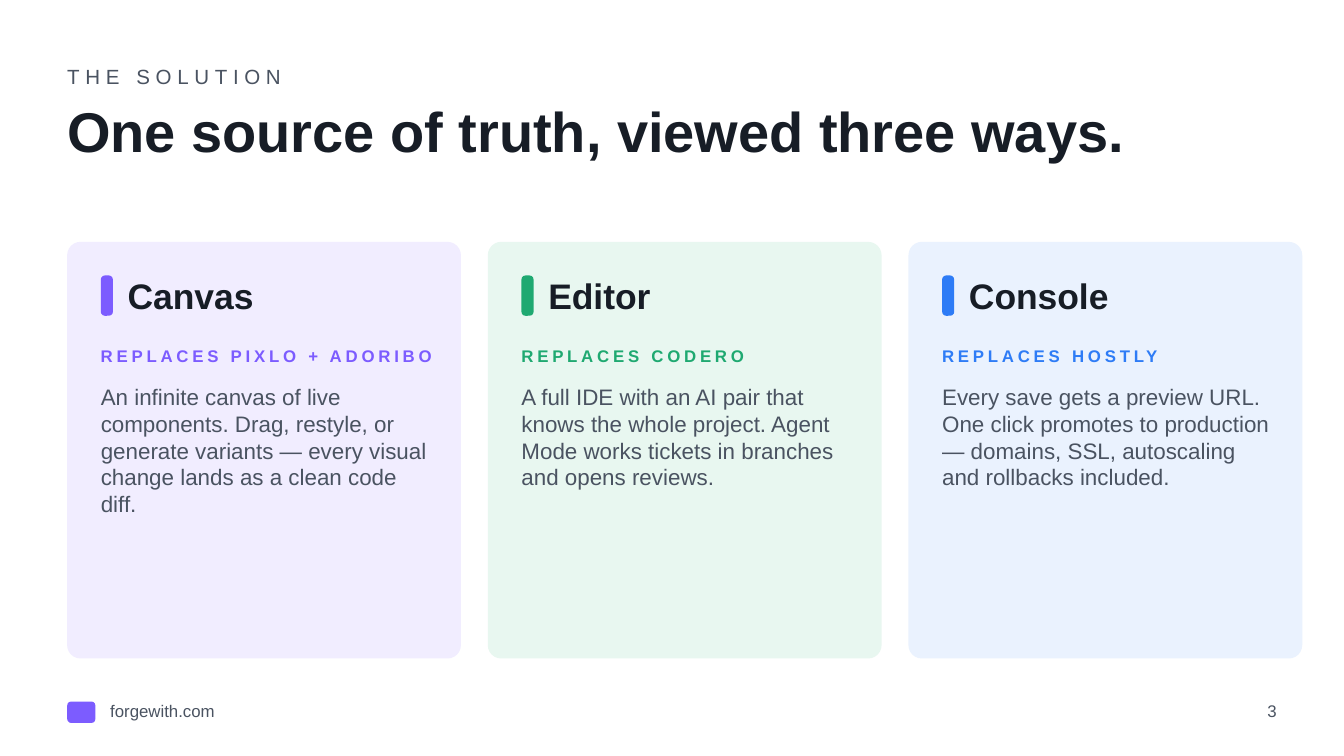
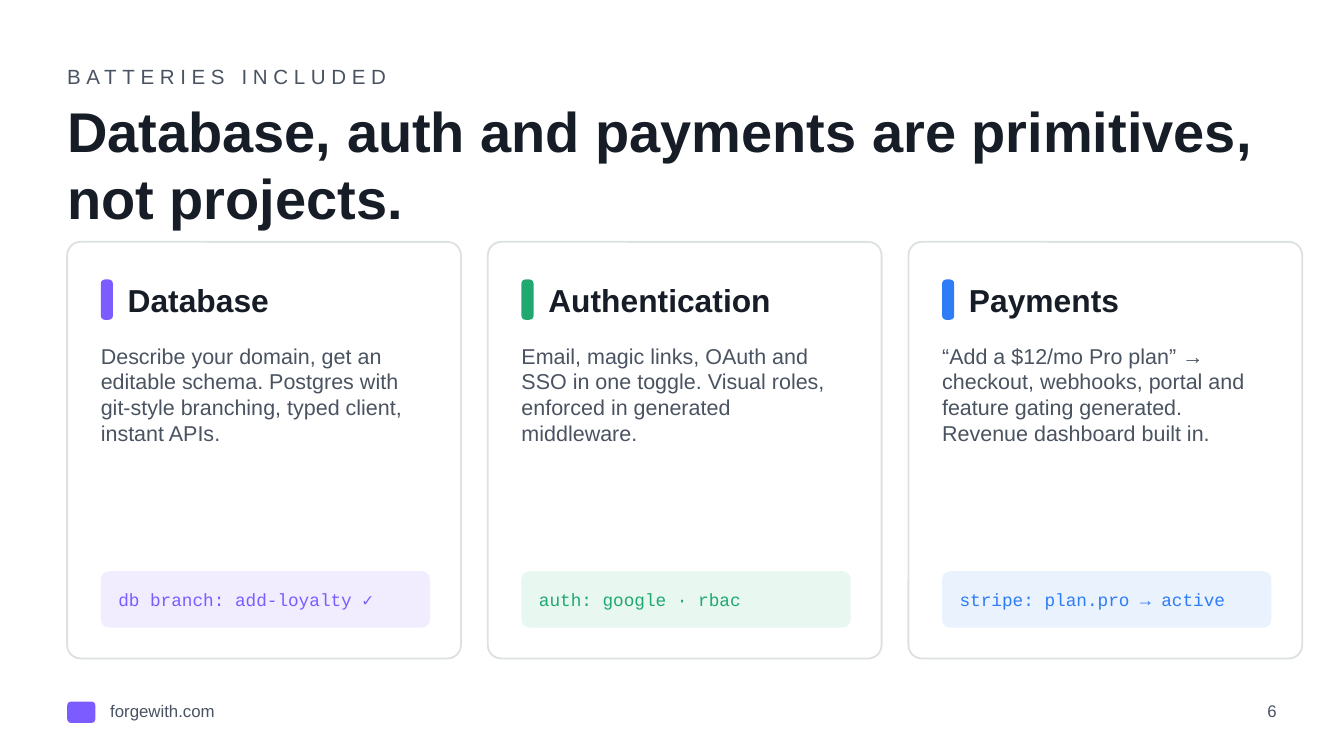
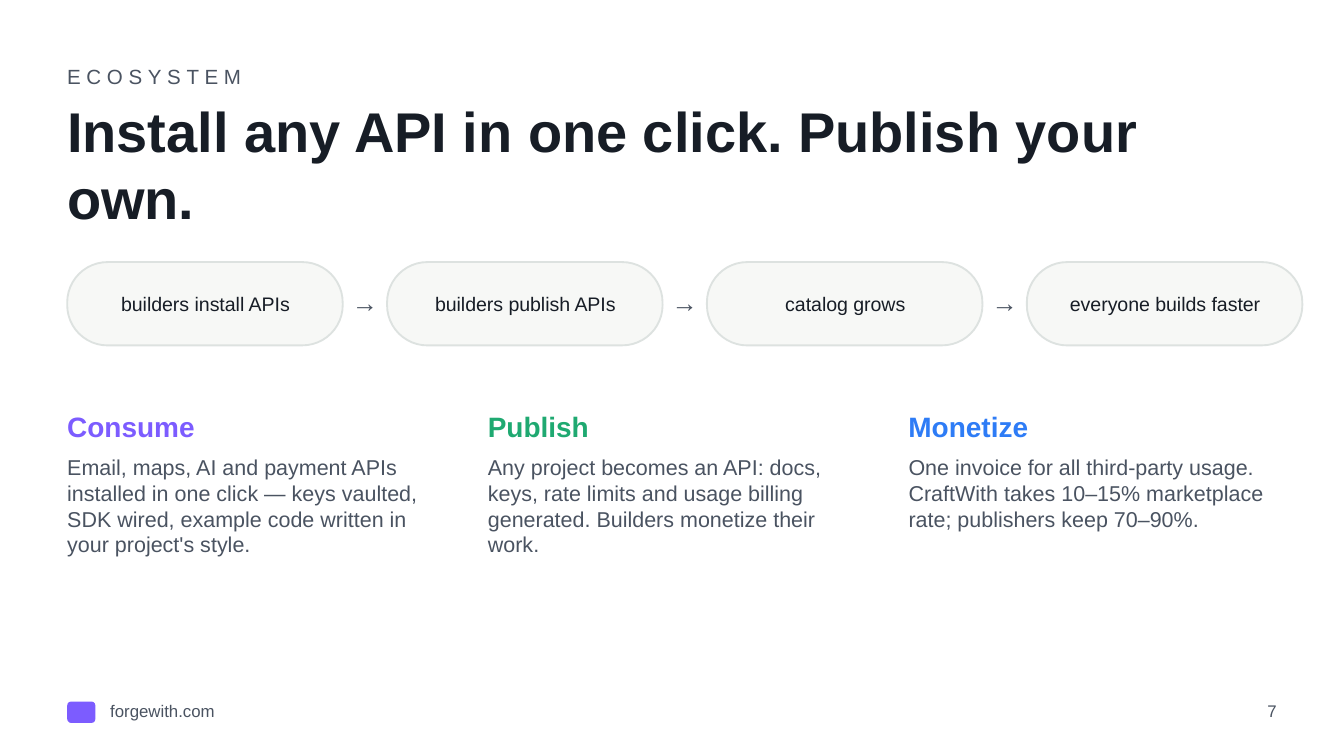
from dataclasses import dataclass, replace

from pptx import Presentation
from pptx.dml.color import RGBColor
from pptx.enum.shapes import MSO_SHAPE
from pptx.enum.text import MSO_ANCHOR, PP_ALIGN
from pptx.util import Inches, Pt

ROUNDED = MSO_SHAPE.ROUNDED_RECTANGLE
TOP, MIDDLE = MSO_ANCHOR.TOP, MSO_ANCHOR.MIDDLE
LEFT, CENTER, RIGHT = PP_ALIGN.LEFT, PP_ALIGN.CENTER, PP_ALIGN.RIGHT


@dataclass(frozen=True)
class TextStyle:
    """How a piece of text looks."""
    size: float
    color: str = "4A5361"
    bold: bool = False
    font: str = "Arial"
    tracking: float = 0


@dataclass(frozen=True)
class Accent:
    """A strong colour and the pale tint that goes with it."""
    strong: str
    tint: str


@dataclass(frozen=True)
class Grid:
    """Equal columns, separated by equal gaps, in inches."""
    left: float
    width: float
    gap: float

    def column(self, index):
        """Return the left edge of a column."""
        return self.left + index * (self.width + self.gap)


@dataclass(frozen=True)
class Theme:
    """Colours and type styles shared by the slides."""
    ink: str = "171D26"
    paper: str = "FFFFFF"
    mist: str = "F7F8F6"
    border: str = "DDE2E0"
    accents: tuple = (
        Accent("7C5CFF", "F1EDFF"),
        Accent("1FA971", "E8F7F0"),
        Accent("2E7CF6", "EAF2FE"),
    )
    kicker: TextStyle = TextStyle(11, tracking=3)
    title: TextStyle = TextStyle(30, ink, bold=True)
    product: TextStyle = TextStyle(19, ink, bold=True)
    primitive: TextStyle = TextStyle(17, ink, bold=True)
    heading: TextStyle = TextStyle(15, bold=True)
    label: TextStyle = TextStyle(9, bold=True, tracking=2)
    lead: TextStyle = TextStyle(12)
    body: TextStyle = TextStyle(11.5)
    code: TextStyle = TextStyle(9.5, font="Courier New")
    step: TextStyle = TextStyle(10.5, ink)
    arrow: TextStyle = TextStyle(14)
    footer: TextStyle = TextStyle(9)


THEME = Theme()
SLIDE_WIDTH = 10
SLIDE_HEIGHT = SLIDE_WIDTH * 9 / 16
MARGIN = SLIDE_WIDTH * 0.05
CONTENT_WIDTH = SLIDE_WIDTH - 2 * MARGIN
THIRDS = Grid(MARGIN, 2.93, 0.2)
QUARTERS = Grid(MARGIN, 2.05, 0.33)
CARD_TOP, CARD_HEIGHT, CARD_PADDING = 1.8, 3.1, 0.25
INNER_WIDTH = 2.45
FLOW_TOP, FLOW_HEIGHT = 1.95, 0.62
FOOTER_TOP = 5.14

PRODUCTS = (
    ("Canvas", "REPLACES PIXLO + ADORIBO",
     "An infinite canvas of live components. Drag, restyle, or generate "
     "variants — every visual change lands as a clean code diff."),
    ("Editor", "REPLACES CODERO",
     "A full IDE with an AI pair that knows the whole project. Agent Mode "
     "works tickets in branches and opens reviews."),
    ("Console", "REPLACES HOSTLY",
     "Every save gets a preview URL. One click promotes to production — "
     "domains, SSL, autoscaling and rollbacks included."),
)
PRIMITIVES = (
    ("Database", "db branch: add-loyalty ✓",
     "Describe your domain, get an editable schema. Postgres with git-style "
     "branching, typed client, instant APIs."),
    ("Authentication", "auth: google · rbac",
     "Email, magic links, OAuth and SSO in one toggle. Visual roles, "
     "enforced in generated middleware."),
    ("Payments", "stripe: plan.pro → active",
     "“Add a $12/mo Pro plan” → checkout, webhooks, portal and feature "
     "gating generated. Revenue dashboard built in."),
)
FLYWHEEL = ("builders install APIs", "builders publish APIs",
            "catalog grows", "everyone builds faster")
BENEFITS = (
    ("Consume",
     "Email, maps, AI and payment APIs installed in one click — keys "
     "vaulted, SDK wired, example code written in your project's style."),
    ("Publish",
     "Any project becomes an API: docs, keys, rate limits and usage billing "
     "generated. Builders monetize their work."),
    ("Monetize",
     "One invoice for all third-party usage. CraftWith takes 10–15% "
     "marketplace rate; publishers keep 70–90%."),
)


def add_text(slide, box, text, style, anchor=MIDDLE, align=LEFT):
    """Add a wrapped text box without insets."""
    frame = slide.shapes.add_textbox(*map(Inches, box)).text_frame
    frame.word_wrap = True
    frame.vertical_anchor = anchor
    frame.margin_left = frame.margin_right = 0
    frame.margin_top = frame.margin_bottom = 0
    paragraph = frame.paragraphs[0]
    paragraph.alignment = align
    run = paragraph.add_run()
    run.text = text
    if style.tracking:
        run._r.get_or_add_rPr().set("spc", str(int(style.tracking * 100)))
    paragraph.font.name = style.font
    paragraph.font.size = Pt(style.size)
    paragraph.font.bold = style.bold
    paragraph.font.color.rgb = RGBColor.from_string(style.color)


def add_panel(slide, box, radius, fill, border=None):
    """Add a rounded panel whose corner radius is given in inches."""
    panel = slide.shapes.add_shape(ROUNDED, *map(Inches, box))
    panel.shadow.inherit = False
    panel.adjustments[0] = radius / min(box[2:])
    panel.fill.solid()
    panel.fill.fore_color.rgb = RGBColor.from_string(fill)
    if border:
        panel.line.color.rgb = RGBColor.from_string(border)
        panel.line.width = Pt(1)
    else:
        panel.line.fill.background()


def add_page(deck, kicker, title, number):
    """Add a blank slide with the shared header and footer."""
    slide = deck.slides.add_slide(deck.slide_layouts[6])
    add_text(slide, (MARGIN, 0.42, CONTENT_WIDTH, 0.3), kicker, THEME.kicker)
    add_text(slide, (MARGIN, 0.72, CONTENT_WIDTH, 0.75), title, THEME.title, TOP)
    add_panel(slide, (MARGIN, FOOTER_TOP + 0.08, 0.21, 0.16), 0.03,
              THEME.accents[0].strong)
    add_text(slide, (0.82, FOOTER_TOP, 2, 0.3), "forgewith.com", THEME.footer)
    add_text(slide, (SLIDE_WIDTH - MARGIN - 0.3, FOOTER_TOP, 0.3, 0.3),
             str(number), THEME.footer, align=RIGHT)
    return slide


def add_card(slide, column, heading, style, heading_top, fill, border=None):
    """Add a card with an accent bar and heading, and return its inner left."""
    left = THIRDS.column(column)
    inner = left + CARD_PADDING
    add_panel(slide, (left, CARD_TOP, THIRDS.width, CARD_HEIGHT), 0.1, fill, border)
    add_panel(slide, (inner, heading_top + 0.05, 0.09, 0.3), 0.03,
              THEME.accents[column].strong)
    add_text(slide, (inner + 0.2, heading_top, 2.3, 0.4), heading, style)
    return inner


def add_product(slide, column, name, replaces, description):
    """Add a tinted card for one product view."""
    accent = THEME.accents[column]
    inner = add_card(slide, column, name, THEME.product, 2, accent.tint)
    add_text(slide, (inner, 2.5, 2.5, 0.3), replaces,
             replace(THEME.label, color=accent.strong))
    add_text(slide, (inner, 2.85, INNER_WIDTH, 1.9), description, THEME.lead, TOP)


def add_primitive(slide, column, name, code, description):
    """Add an outlined card that ends in a strip of code."""
    accent = THEME.accents[column]
    inner = add_card(slide, column, name, THEME.primitive, 2.03,
                     THEME.paper, THEME.border)
    add_text(slide, (inner, 2.55, INNER_WIDTH, 1.6), description, THEME.body, TOP)
    add_panel(slide, (inner, 4.25, INNER_WIDTH, 0.42), 0.06, accent.tint)
    add_text(slide, (inner + 0.13, 4.25, 2.25, 0.42), code,
             replace(THEME.code, color=accent.strong))


def add_flow(slide, steps):
    """Add a row of pills with an arrow in each gap."""
    for column, step in enumerate(steps):
        left = QUARTERS.column(column)
        if column:
            add_text(slide, (left - 0.35, FLOW_TOP + 0.1, 0.37, 0.4), "→",
                     THEME.arrow, align=CENTER)
        add_panel(slide, (left, FLOW_TOP, QUARTERS.width, FLOW_HEIGHT), 0.3,
                  THEME.mist, THEME.border)
        add_text(slide, (left + 0.08, FLOW_TOP, 1.9, FLOW_HEIGHT), step,
                 THEME.step, align=CENTER)


def add_benefit(slide, column, heading, description):
    """Add a coloured heading above a short paragraph."""
    left = THIRDS.column(column)
    add_text(slide, (left, 3, THIRDS.width, 0.35), heading,
             replace(THEME.heading, color=THEME.accents[column].strong))
    add_text(slide, (left, 3.38, 2.85, 1.5), description, THEME.body, TOP)


def main():
    """Build and save the deck."""
    deck = Presentation()
    deck.slide_width, deck.slide_height = Inches(SLIDE_WIDTH), Inches(SLIDE_HEIGHT)

    solution = add_page(deck, "THE SOLUTION",
                        "One source of truth, viewed three ways.", 3)
    for column, product in enumerate(PRODUCTS):
        add_product(solution, column, *product)

    batteries = add_page(deck, "BATTERIES INCLUDED",
                         "Database, auth and payments are primitives, not projects.", 6)
    for column, primitive in enumerate(PRIMITIVES):
        add_primitive(batteries, column, *primitive)

    ecosystem = add_page(deck, "ECOSYSTEM",
                         "Install any API in one click. Publish your own.", 7)
    add_flow(ecosystem, FLYWHEEL)
    for column, benefit in enumerate(BENEFITS):
        add_benefit(ecosystem, column, *benefit)

    deck.save("out.pptx")


if __name__ == "__main__":
    main()
